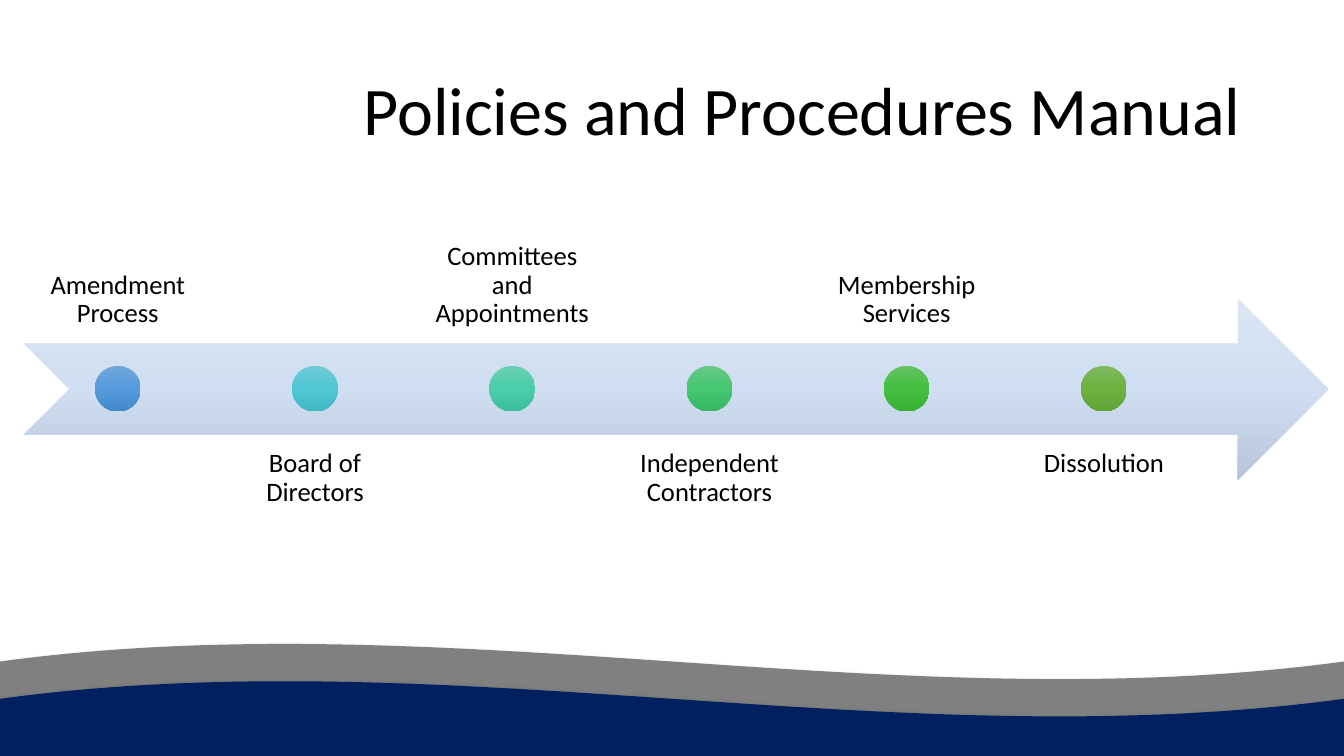
from copy import deepcopy

from pptx import Presentation
from pptx.dml.color import RGBColor
from pptx.enum import shapes, text
from pptx.oxml import parse_xml
from pptx.oxml.ns import nsdecls, qn
from pptx.util import Cm, Pt

TOPICS = [
    ("Amendment Process", ("71A6DB", "559BDB", "448ACA")),
    ("Board of Directors", ("6DCAD5", "4FC7D5", "3FB7C4")),
    ("Committees and Appointments", ("69CFB1", "4ACEAA", "3BBE9A")),
    ("Independent Contractors", ("66C885", "45C772", "37B764")),
    ("Membership Services", ("64C162", "44BF41", "37B034")),
    ("Dissolution", ("81B861", "6FB242", "62A336")),
]
LEFT, PITCH = 0.61, 4.97
LABEL_W, LABEL_H, DOT = 4.72, 4.57, 1.15
ABOVE, BELOW, DOT_TOP = 4.09, 10.95, 9.22


def rgb(value):
    return RGBColor.from_string(value)


def write(sp, words, size=19, align="CENTER", anchor="TOP", inset=0.38):
    tf = sp.text_frame
    tf.word_wrap = True
    tf.auto_size = text.MSO_AUTO_SIZE.NONE
    tf.vertical_anchor = text.MSO_ANCHOR[anchor]
    tf.margin_left = tf.margin_right = Cm(inset)
    tf.margin_top = tf.margin_bottom = Cm(inset)
    p = tf.paragraphs[0]
    p.alignment = text.PP_ALIGN[align]
    p.line_spacing = 0.9
    r = p.add_run()
    r.text = words
    r.font.name = "Calibri"
    r.font.size = Pt(size)
    r.font.color.rgb = rgb("000000")


def add_shape(s, kind, left, top, width, height):
    sp = s.shapes.add_shape(kind, Cm(left), Cm(top), Cm(width), Cm(height))
    sp.shadow.inherit = False
    sp.line.fill.background()
    return sp


def shade(sp, colours):
    sp.fill.gradient()
    sp.fill.gradient_angle = 270
    stops = sp._element.spPr.find(".//" + qn("a:gsLst"))
    stops.insert(1, deepcopy(stops[0]))
    for stop, colour, position in zip(sp.fill.gradient_stops, colours, (0, 0.5, 1)):
        stop.color.rgb = rgb(colour)
        stop.position = position


def add_wave(s, top, colour):
    sp = add_shape(s, shapes.MSO_SHAPE.WAVE, 0, top, 33.87, 3.68)
    sp.fill.solid()
    sp.fill.fore_color.rgb = rgb(colour)
    sp._element.spPr.find(qn("a:effectLst")).append(parse_xml(
        f'<a:outerShdw {nsdecls("a")} blurRad="{Pt(3.5)}" dist="{Pt(2.2)}" '
        'dir="5400000" rotWithShape="0"><a:srgbClr val="000000">'
        '<a:alpha val="32000"/></a:srgbClr></a:outerShdw>'))


def add_topic(s, index, words, colours):
    left = LEFT + index * PITCH
    top, anchor = (BELOW, "TOP") if index % 2 else (ABOVE, "BOTTOM")
    label = s.shapes.add_textbox(Cm(left), Cm(top), Cm(LABEL_W), Cm(LABEL_H))
    write(label, words, anchor=anchor)
    dot_left = left + (LABEL_W - DOT) / 2
    shade(add_shape(s, shapes.MSO_SHAPE.OVAL, dot_left, DOT_TOP, DOT, DOT), colours)


def add_title(s, words):
    sp = s.shapes.title
    sp.left, sp.top, sp.width, sp.height = Cm(7.39), Cm(1.02), Cm(24.13), Cm(3.68)
    write(sp, words, size=48.6, align="RIGHT", anchor="MIDDLE", inset=0.25)


def main():
    prs = Presentation()
    prs.slide_width, prs.slide_height = Cm(33.87), Cm(19.05)
    s = prs.slides.add_slide(prs.slide_layouts[5])
    add_wave(s, 16.21, "808080")
    add_wave(s, 17.15, "002060")
    add_title(s, "Policies and Procedures Manual")
    arrow = add_shape(s, shapes.MSO_SHAPE.NOTCHED_RIGHT_ARROW, LEFT, 7.52, 32.87, LABEL_H)
    shade(arrow, ("DBE5F3", "D0DEF1", "B6C5D9"))
    for index, (words, colours) in enumerate(TOPICS):
        add_topic(s, index, words, colours)
    prs.save("out.pptx")


if __name__ == "__main__":
    main()
